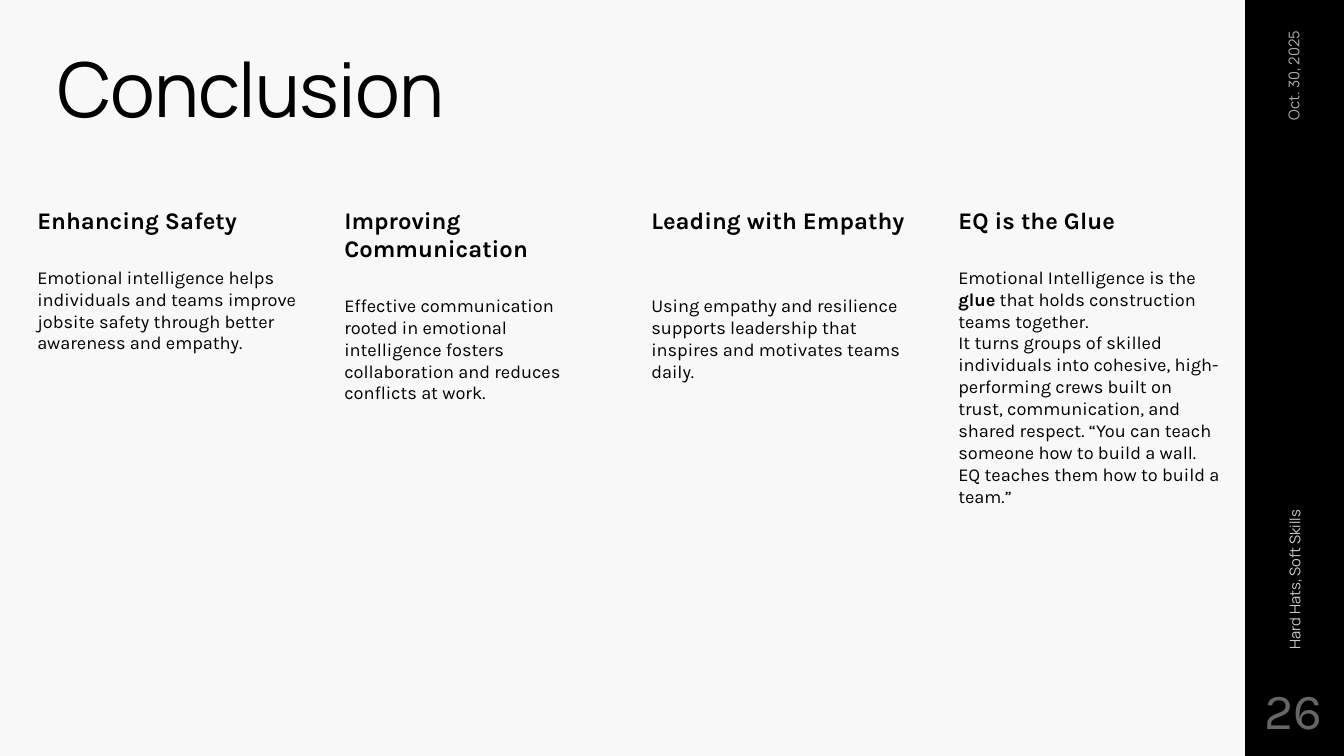
from pptx import Presentation
from pptx.dml.color import RGBColor
from pptx.enum import shapes, text
from pptx.util import Inches, Pt

COLORS = {"paper": "F8F8F8", "ink": "000000", "date": "B2B2B2",
          "footer": "CCCCCC", "number": "666666"}
TITLE = "Conclusion"
DATE = "Oct. 30, 2025"
FOOTER = "Hard Hats, Soft Skills"
NUMBER = "26"
COLUMNS = [
    ("Enhancing Safety", 0,
     ["Emotional intelligence helps individuals and teams improve jobsite "
      "safety through better awareness and empathy."]),
    ("Improving Communication", 0.28,
     ["Effective communication rooted in emotional intelligence fosters "
      "collaboration and reduces conflicts at work."]),
    ("Leading with Empathy", 0.28,
     ["Using empathy and resilience supports leadership that inspires and "
      "motivates teams daily."]),
    ("EQ is the Glue", 0,
     ["Emotional Intelligence is the ", ("glue", True),
      " that holds construction teams together.\n"
      "It turns groups of skilled individuals into cohesive, high-performing "
      "crews built on trust, communication, and shared respect. “You can teach "
      "someone how to build a wall. EQ teaches them how to build a team.”"]),
]
LEFT, STEP, COL_W = 0.22, 3.045, 2.77
HEAD_Y, HEAD_H, BODY_H = 2.02, 0.6, 2.45
COL_INSETS = (0.15, 0.02, 0.02, 0.02)


def rgb(name):
    return RGBColor.from_string(COLORS[name])


def add_text(slide, content, box, size, font="Karla", color="ink", bold=False,
             align=text.PP_ALIGN.LEFT, anchor=text.MSO_ANCHOR.TOP,
             insets=(0.1, 0.05, 0.1, 0.05), rotation=0, line=None, spc=None):
    sp = slide.shapes.add_textbox(*map(Inches, box))
    sp.rotation = rotation
    tf = sp.text_frame
    tf.word_wrap = True
    tf.vertical_anchor = anchor
    tf.margin_left, tf.margin_top, tf.margin_right, tf.margin_bottom = map(Inches, insets)
    p = tf.paragraphs[0]
    p.alignment = align
    if line:
        p.line_spacing = line
    for part in [content] if isinstance(content, str) else content:
        words, strong = (part, bold) if isinstance(part, str) else part
        for i, row in enumerate(words.split("\n")):
            if i:
                p.add_line_break()
            r = p.add_run()
            r.text = row
            r.font.name = font
            r.font.size = Pt(size)
            r.font.bold = strong
            r.font.color.rgb = rgb(color)
            if spc is not None:
                r.font._element.set("spc", str(spc))


def main():
    prs = Presentation()
    prs.slide_width, prs.slide_height = Inches(13.33), Inches(7.5)
    slide = prs.slides.add_slide(prs.slide_layouts[6])
    fill = slide.background.fill
    fill.solid()
    fill.fore_color.rgb = rgb("paper")

    bar = slide.shapes.add_shape(shapes.MSO_SHAPE.RECTANGLE,
                                 *map(Inches, (12.35, 0, 0.98, 7.5)))
    bar.shadow.inherit = False
    bar.fill.solid()
    bar.fill.fore_color.rgb = rgb("ink")
    bar.line.fill.background()

    add_text(slide, TITLE, (0.47, 0.47, 11.91, 1.78), 54, font="Manrope",
             line=0.9, spc=-50)

    for i, (heading, drop, body) in enumerate(COLUMNS):
        x = LEFT + i * STEP
        add_text(slide, heading, (x, HEAD_Y, COL_W, HEAD_H), 17, bold=True,
                 insets=COL_INSETS)
        add_text(slide, body, (x, HEAD_Y + HEAD_H + drop, COL_W, BODY_H - drop), 13,
                 insets=COL_INSETS)

    middle = text.MSO_ANCHOR.MIDDLE
    add_text(slide, DATE, (11.79, 1.05, 2.08, 0.4), 10.5, font="Manrope",
             color="date", align=text.PP_ALIGN.RIGHT, anchor=middle, rotation=270)
    add_text(slide, FOOTER, (10.88, 4.38, 3.92, 0.4), 10.5, font="Manrope",
             color="footer", anchor=middle, rotation=270)
    add_text(slide, NUMBER, (12.33, 6.71, 1, 0.65), 36, color="number",
             align=text.PP_ALIGN.CENTER, anchor=middle, insets=(0.05,) * 4)

    prs.save("out.pptx")


if __name__ == "__main__":
    main()
